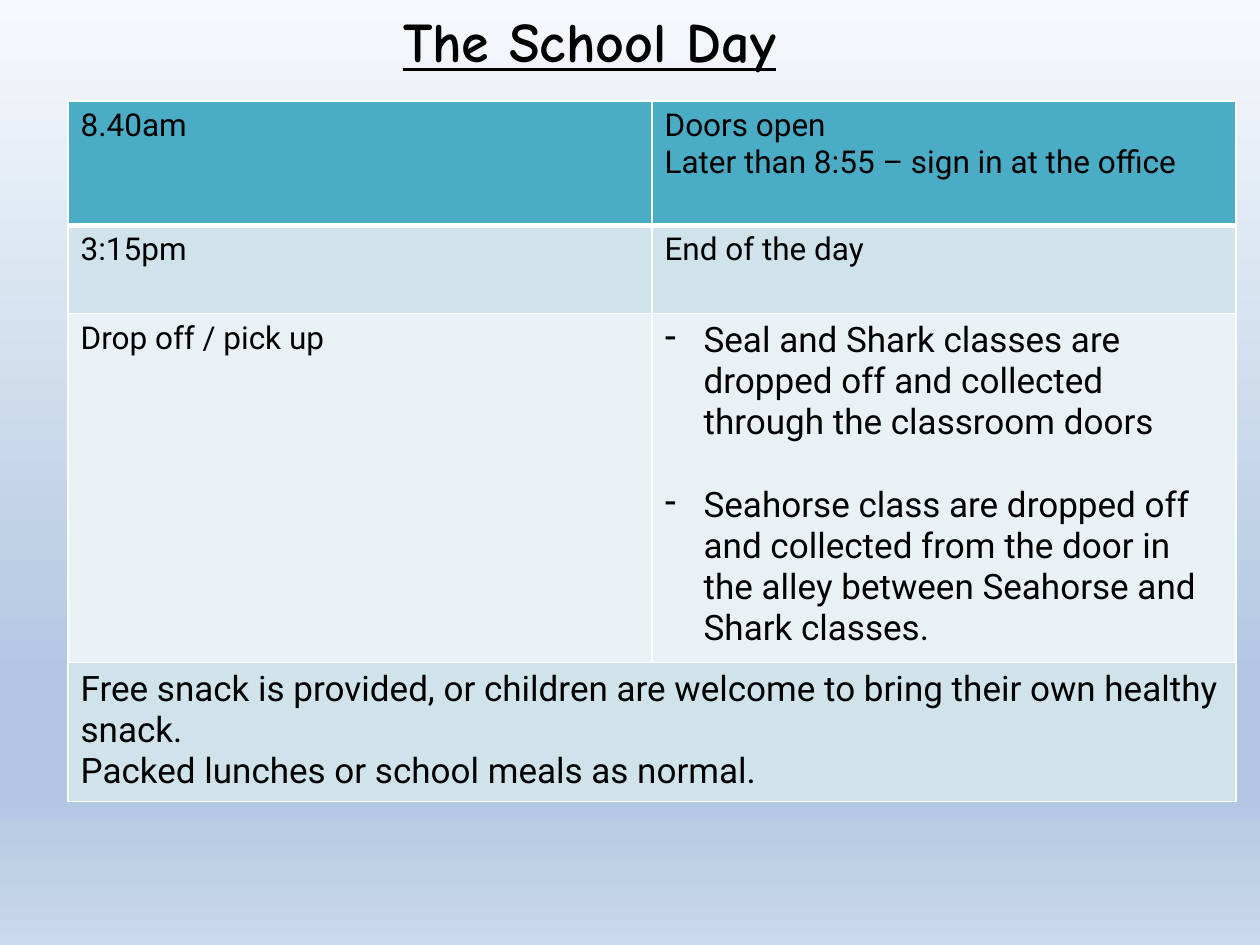
import copy

import pptx
import pptx.dml.color
import pptx.enum.text
import pptx.oxml
import pptx.oxml.ns
import pptx.util
from pptx.util import Inches

COLORS = {
    "text": "000000",
    "border": "FFFFFF",
    "header": "4BACC6",
    "band": "D0E3EA",
    "light_band": "E9F1F5",
}
BACKGROUND_STOPS = [(0, "F6F9FC"), (0.74, "B0C6E1"), (0.83, "B0C6E1"), (1, "CAD9EB")]
TITLE_FORMAT = {"name": "Comic Neue", "size": pptx.util.Pt(32), "bold": True, "underline": True}
BODY_FORMAT = {"name": "Roboto", "size": pptx.util.Pt(18), "bold": False}
LARGE_FORMAT = {**BODY_FORMAT, "size": pptx.util.Pt(20)}

ROWS = [
    (0.99, "header", [["8.40am"], ["Doors open", "Later than 8:55 – sign in at the office"]]),
    (0.7, "band", [["3:15pm"], ["End of the day"]]),
    (2.77, "light_band", [["Drop off / pick up"], [
        "Seal and Shark classes are dropped off and collected through the classroom doors",
        "Seahorse class are dropped off and collected from the door in the alley "
        "between Seahorse and Shark classes.",
    ]]),
    (1.1, "band", [[
        "Free snack is provided, or children are welcome to bring their own healthy snack.",
        "Packed lunches or school meals as normal.",
    ]]),
]
BULLET_CELL = (2, 1)
LARGE_CELLS = [BULLET_CELL, (3, 0)]


def rgb(name):
    return pptx.dml.color.RGBColor.from_string(COLORS[name])


def write_paragraphs(text_frame, lines, font_format):
    text_frame.text = "\n".join(lines)
    for paragraph in text_frame.paragraphs:
        for run in paragraph.runs:
            for key, value in font_format.items():
                setattr(run.font, key, value)
            run.font.color.rgb = rgb("text")


def add_bullets(text_frame):
    for index, paragraph in enumerate(text_frame.paragraphs):
        if index:
            paragraph.space_before = pptx.util.Pt(23.5)
        properties = paragraph._p.get_or_add_pPr()
        properties.set("marL", str(Inches(0.31)))
        properties.set("indent", str(Inches(-0.31)))
        bullet = pptx.oxml.parse_xml(
            f'<a:buChar {pptx.oxml.ns.nsdecls("a")} char="-"/>')
        properties.append(bullet)


def set_borders(cell, widths):
    properties = cell._tc.get_or_add_tcPr()
    for index, (side, width) in enumerate(widths.items()):
        line = pptx.oxml.parse_xml(
            f'<a:ln{side} {pptx.oxml.ns.nsdecls("a")} w="{pptx.util.Pt(width)}">'
            f'<a:solidFill><a:srgbClr val="{COLORS["border"]}"/></a:solidFill></a:ln{side}>')
        properties.insert(index, line)


def paint_background(slide):
    fill = slide.background.fill
    fill.gradient()
    fill.gradient_angle = 270
    stop_list = next(slide.element.iter(pptx.oxml.ns.qn("a:gsLst")))
    while len(stop_list) < len(BACKGROUND_STOPS):
        stop_list.append(copy.deepcopy(stop_list[0]))
    for stop, (position, color) in zip(fill.gradient_stops, BACKGROUND_STOPS):
        stop.position = position
        stop.color.rgb = pptx.dml.color.RGBColor.from_string(color)


def place_title(slide, left, top, width, height):
    title = slide.shapes.title
    title.left, title.top, title.width, title.height = left, top, width, height
    frame_format = {
        "word_wrap": True,
        "auto_size": pptx.enum.text.MSO_AUTO_SIZE.NONE,
        "vertical_anchor": pptx.enum.text.MSO_ANCHOR.TOP,
    }
    for key, value in frame_format.items():
        setattr(title.text_frame, key, value)
    write_paragraphs(title.text_frame, ["The School Day"], TITLE_FORMAT)
    title.text_frame.paragraphs[0].alignment = pptx.enum.text.PP_ALIGN.CENTER


def add_schedule(slide, left, top, width, height):
    table = slide.shapes.add_table(len(ROWS), 2, left, top, width, height).table
    table.first_row = table.horz_banding = False
    for row_index, (row_height, fill_name, texts) in enumerate(ROWS):
        table.rows[row_index].height = Inches(row_height)
        widths = {"L": 1, "R": 1, "T": 3 if row_index == 1 else 1, "B": 3 if row_index == 0 else 1}
        for column_index, cell in enumerate(table.rows[row_index].cells):
            cell.fill.solid()
            cell.fill.fore_color.rgb = rgb(fill_name)
            set_borders(cell, widths)
            if column_index < len(texts):
                large = (row_index, column_index) in LARGE_CELLS
                write_paragraphs(cell.text_frame, texts[column_index],
                                 LARGE_FORMAT if large else BODY_FORMAT)
    add_bullets(table.cell(*BULLET_CELL).text_frame)
    table.cell(3, 0).merge(table.cell(3, 1))


def main():
    presentation = pptx.Presentation()
    presentation.slide_width, presentation.slide_height = Inches(10), Inches(7.5)
    slide = presentation.slides.add_slide(presentation.slide_layouts[5])
    paint_background(slide)
    place_title(slide, Inches(0.94), Inches(0), Inches(7.48), Inches(0.64))
    add_schedule(slide, Inches(0.54), Inches(0.8), Inches(9.27), Inches(5.56))
    presentation.save("out.pptx")


if __name__ == "__main__":
    main()
